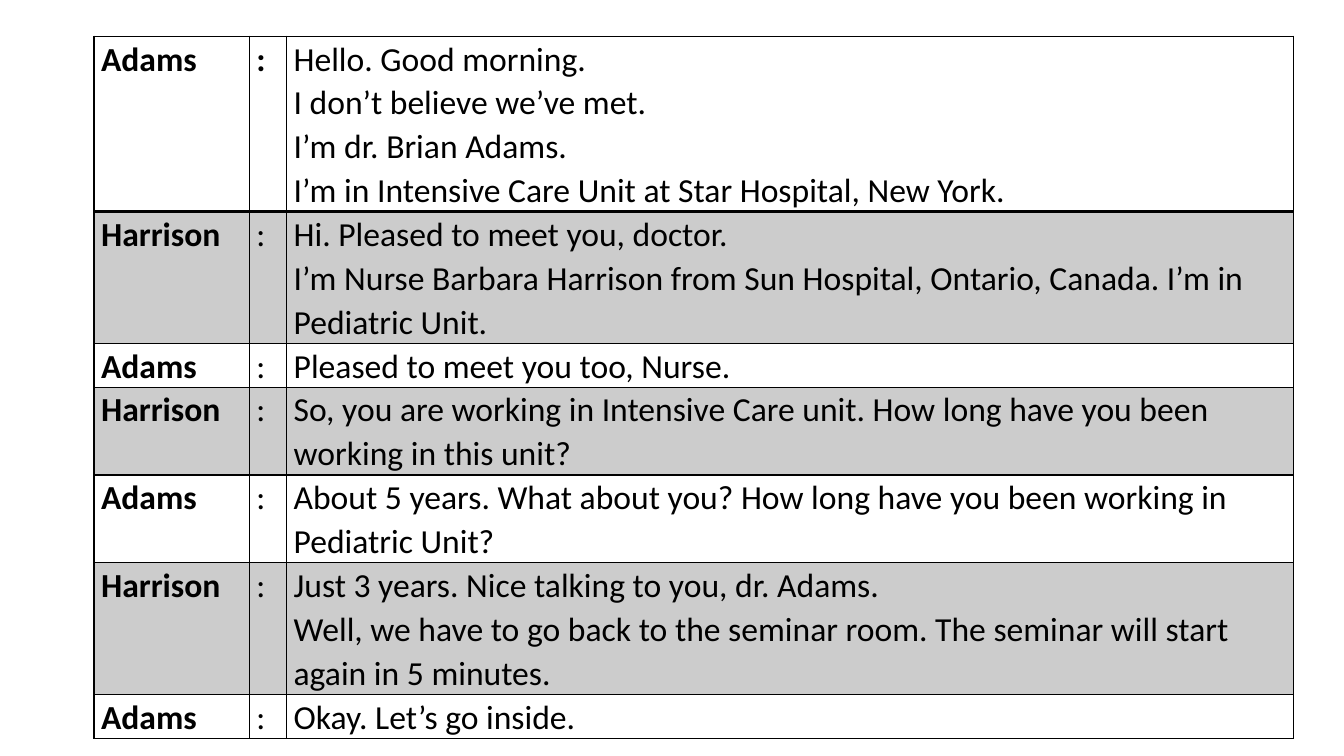
from lxml import etree
from pptx import Presentation, util as u
from pptx.dml.color import RGBColor
from pptx.oxml.ns import qn

DIALOGUE = [
    ("Adams", 4, ["Hello. Good morning.", "I don’t believe we’ve met.", "I’m dr. Brian Adams.",
                  "I’m in Intensive Care Unit at Star Hospital, New York."]),
    ("Harrison", 3, ["Hi. Pleased to meet you, doctor.",
                     "I’m Nurse Barbara Harrison from Sun Hospital, Ontario, Canada. "
                     "I’m in Pediatric Unit."]),
    ("Adams", 1, ["Pleased to meet you too, Nurse."]),
    ("Harrison", 2, ["So, you are working in Intensive Care unit. "
                     "How long have you been working in this unit?"]),
    ("Adams", 2, ["About 5 years. What about you? "
                  "How long have you been working in Pediatric Unit?"]),
    ("Harrison", 3, ["Just 3 years. Nice talking to you, dr. Adams.",
                     "Well, we have to go back to the seminar room. "
                     "The seminar will start again in 5 minutes."]),
    ("Adams", 1, ["Okay. Let’s go inside."]),
]


def color(hex_code):
    return RGBColor.from_string(hex_code)


def write(frame, lines, size=24, font="Calibri", ink="000000", bold=False, spacing=1.07):
    for index, line in enumerate(lines):
        paragraph = frame.paragraphs[0] if index == 0 else frame.add_paragraph()
        paragraph.line_spacing = spacing
        words = paragraph.add_run()
        words.text = line
        words.font.size = u.Pt(size)
        words.font.name = font
        words.font.bold = bold
        words.font.color.rgb = color(ink)


class Deck:
    """Slide builder on a grid of 100 columns by 100 rows."""

    def __init__(self, width=13.33, height=7.5):
        self.prs = Presentation()
        self.prs.slide_width = u.Inches(width)
        self.prs.slide_height = u.Inches(height)
        self.ink, self.shade = "000000", "CCCCCC"
        self.slide = self.prs.slides.add_slide(self.prs.slide_layouts[6])

    def across(self, columns):
        return round(self.prs.slide_width * columns / 100)

    def down(self, rows):
        return round(self.prs.slide_height * rows / 100)

    def border(self, cell, widths):
        properties = cell._tc.get_or_add_tcPr()
        for side, width in zip("LRTB", widths):
            edge = etree.SubElement(properties, qn(f"a:ln{side}"), w=str(u.Pt(width)))
            fill = etree.SubElement(edge, qn("a:solidFill"))
            etree.SubElement(fill, qn("a:srgbClr"), val=self.ink)

    def cell(self, cell, lines, widths, shaded=False, bold=False):
        cell.margin_left = cell.margin_right = u.Inches(0.07)
        cell.margin_top = cell.margin_bottom = 0
        self.border(cell, widths)
        if shaded:
            cell.fill.solid()
            cell.fill.fore_color.rgb = color(self.shade)
        else:
            cell.fill.background()
        write(cell.text_frame, lines, ink=self.ink, bold=bold)

    def dialogue(self, turns, left, top, columns, line_rows):
        height = line_rows * sum(count for _, count, _ in turns)
        table = self.slide.shapes.add_table(
            len(turns), len(columns), self.across(left), self.down(top),
            self.across(sum(columns)), self.down(height)).table
        table.horz_banding = table.first_row = False
        for column, width in zip(table.columns, columns):
            column.width = self.across(width)
        for index, (speaker, count, speech) in enumerate(turns):
            opening = index == 0
            table.rows[index].height = self.down(line_rows * count)
            widths = (1, 1, 1, 2 if opening else 1)
            entries = [([speaker], True), ([":"], opening), (speech, False)]
            for position, (lines, bold) in enumerate(entries):
                self.cell(table.cell(index, position), lines, widths,
                          shaded=index % 2 == 1, bold=bold)


def main():
    deck = Deck()
    deck.dialogue(DIALOGUE, left=7, top=4.8, columns=(11.55, 2.78, 74.93), line_rows=5.7)
    deck.prs.save("out.pptx")


if __name__ == "__main__":
    main()
